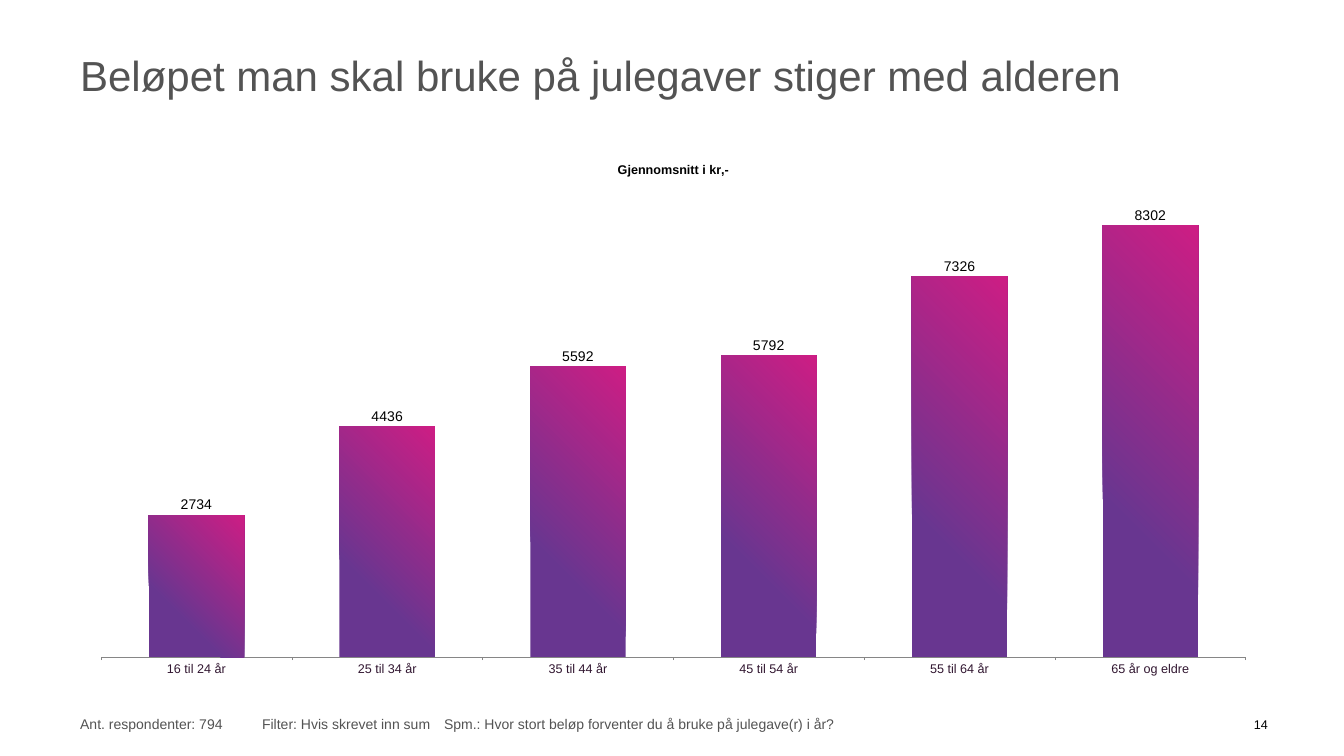
from typing import NamedTuple

from lxml import etree
from pptx import Presentation
from pptx.chart.data import CategoryChartData
from pptx.dml.color import RGBColor
from pptx.enum.chart import XL_CHART_TYPE, XL_LABEL_POSITION, XL_TICK_MARK
from pptx.enum.text import MSO_ANCHOR, MSO_AUTO_SIZE, PP_ALIGN
from pptx.oxml import parse_xml
from pptx.oxml.ns import nsdecls, qn
from pptx.util import Cm, Pt

COLUMN = XL_CHART_TYPE.COLUMN_CLUSTERED
OUTSIDE = XL_LABEL_POSITION.OUTSIDE_END
TICK_OUT = XL_TICK_MARK.OUTSIDE
MIDDLE, TOP = MSO_ANCHOR.MIDDLE, MSO_ANCHOR.TOP
LEFT, CENTER = PP_ALIGN.LEFT, PP_ALIGN.CENTER
NO_FIT = MSO_AUTO_SIZE.NONE

FONT = "Arial"
GREY, BLACK, PLUM = "535353", "000000", "321731"
PINK, VIOLET, RULE = "CD1D84", "683690", "868686"
EDGE, WIDE = 3.89, 60.1
TAB = 9.17

HEAD = "Gjennomsnitt i kr,-"
AMOUNTS = {
    "16 til 24 år": 2734,
    "25 til 34 år": 4436,
    "35 til 44 år": 5592,
    "45 til 54 år": 5792,
    "55 til 64 år": 7326,
    "65 år og eldre": 8302,
}


class Box(NamedTuple):
    left: float
    top: float
    width: float
    height: float

    def sizes(self) -> list:
        return [Cm(n) for n in self]


class Label(NamedTuple):
    text: str
    box: Box
    size: float
    color: str = GREY
    align: int = LEFT
    anchor: int = MIDDLE
    wrap: bool = True


TITLE = Label("Beløpet man skal bruke på julegaver stiger med alderen",
              Box(EDGE, 1.19, WIDE, 5.18), 60)
NUMBER = Label("14", Box(63.02, 35.97, 1.07, 1.07), 18, BLACK, CENTER, TOP, False)
NOTE = Label("Ant. respondenter: 794\tFilter: Hvis skrevet inn sum\t"
             "Spm.: Hvor stort beløp forventer du å bruke på julegave(r) i år?",
             Box(EDGE, 35.38, WIDE, 2.21), 20)
PLOT = {"x": 0.02, "y": 0.08, "w": 0.96, "h": 0.86}


def rgb(code: str) -> RGBColor:
    return RGBColor.from_string(code)


def style(font, size: float, color: str, bold: bool = False) -> None:
    for key, value in {"name": FONT, "size": Pt(size), "bold": bold}.items():
        setattr(font, key, value)
    font.color.rgb = rgb(color)


def write(shape, label: Label, tabs: int = 0) -> None:
    """Place a text shape and format its only paragraph."""
    for key, value in zip(("left", "top", "width", "height"), label.box.sizes()):
        setattr(shape, key, value)
    frame = shape.text_frame
    form = {"word_wrap": label.wrap, "auto_size": NO_FIT,
            "vertical_anchor": label.anchor}
    form.update({f"margin_{side}": Cm(0.15)
                 for side in ("left", "right", "top", "bottom")})
    for key, value in form.items():
        setattr(frame, key, value)
    frame.text = label.text
    para = frame.paragraphs[0]
    para.alignment = label.align
    if tabs:
        stops = etree.SubElement(para._p.get_or_add_pPr(), qn("a:tabLst"))
        for step in range(1, tabs + 1):
            etree.SubElement(stops, qn("a:tab"), pos=str(Cm(TAB * step)), algn="l")
    style(para.runs[0].font, label.size, label.color)


def fade(series) -> None:
    """Fill the columns with a glow from the top right corner."""
    stops = "".join(
        f'<a:gs pos="{at * 1000}"><a:srgbClr val="{color}"/></a:gs>'
        for at, color in ((0, PINK), (70, VIOLET), (100, VIOLET)))
    series.format.fill.solid()
    fill = series.format.fill._xPr.find(qn("a:solidFill"))
    fill.getparent().replace(fill, parse_xml(
        f'<a:gradFill {nsdecls("a")} rotWithShape="1"><a:gsLst>{stops}</a:gsLst>'
        '<a:path path="circle"><a:fillToRect l="100000" b="100000"/></a:path>'
        '</a:gradFill>'))


def lay_out(chart) -> None:
    """Fix the inner plot area as shares of the chart."""
    area = chart._chartSpace.chart.plotArea
    for old in area.findall(qn("c:layout")):
        area.remove(old)
    parts = "".join(f'<c:{key}Mode val="edge"/>' for key in "xy")
    parts += "".join(f'<c:{key} val="{share}"/>' for key, share in PLOT.items())
    area.insert(0, parse_xml(
        f'<c:layout {nsdecls("c")}><c:manualLayout>'
        f'<c:layoutTarget val="inner"/>{parts}</c:manualLayout></c:layout>'))


def add_columns(slide, box: Box) -> None:
    data = CategoryChartData(number_format="0")
    data.categories = list(AMOUNTS)
    data.add_series(HEAD, list(AMOUNTS.values()))
    chart = slide.shapes.add_chart(COLUMN, *box.sizes(), data).chart
    style(chart.font, 10, BLACK)
    chart.has_legend = False

    # Chart title
    chart.has_title = True
    head = chart.chart_title
    head.include_in_layout = False
    head.text_frame.text = HEAD
    style(head.text_frame.paragraphs[0].runs[0].font, 18, BLACK, True)

    # Axes
    axis = chart.category_axis
    axis.major_tick_mark = TICK_OUT
    axis.format.line.color.rgb = rgb(RULE)
    style(axis.tick_labels.font, 18, PLUM)
    scale = chart.value_axis
    form = {"minimum_scale": 0, "maximum_scale": 9000,
            "has_major_gridlines": False, "visible": False}
    for key, value in form.items():
        setattr(scale, key, value)

    # Columns and their values
    plot = chart.plots[0]
    plot.gap_width = 100
    plot.vary_by_categories = False
    fade(plot.series[0])
    plot.has_data_labels = True
    labels = plot.data_labels
    form = {"show_value": True, "position": OUTSIDE,
            "number_format": "0", "number_format_is_linked": False}
    for key, value in form.items():
        setattr(labels, key, value)
    style(labels.font, 20, BLACK)
    lay_out(chart)


def main() -> None:
    deck = Presentation()
    deck.slide_width, deck.slide_height = Cm(67.74), Cm(38.1)
    slide = deck.slides.add_slide(deck.slide_layouts[5])
    write(slide.shapes.title, TITLE)

    # Page number and footnote
    write(slide.shapes.add_textbox(*NUMBER.box.sizes()), NUMBER)
    write(slide.shapes.add_textbox(*NOTE.box.sizes()), NOTE, tabs=2)

    add_columns(slide, Box(EDGE, 7.34, WIDE, 27.43))
    deck.save("out.pptx")


if __name__ == "__main__":
    main()
